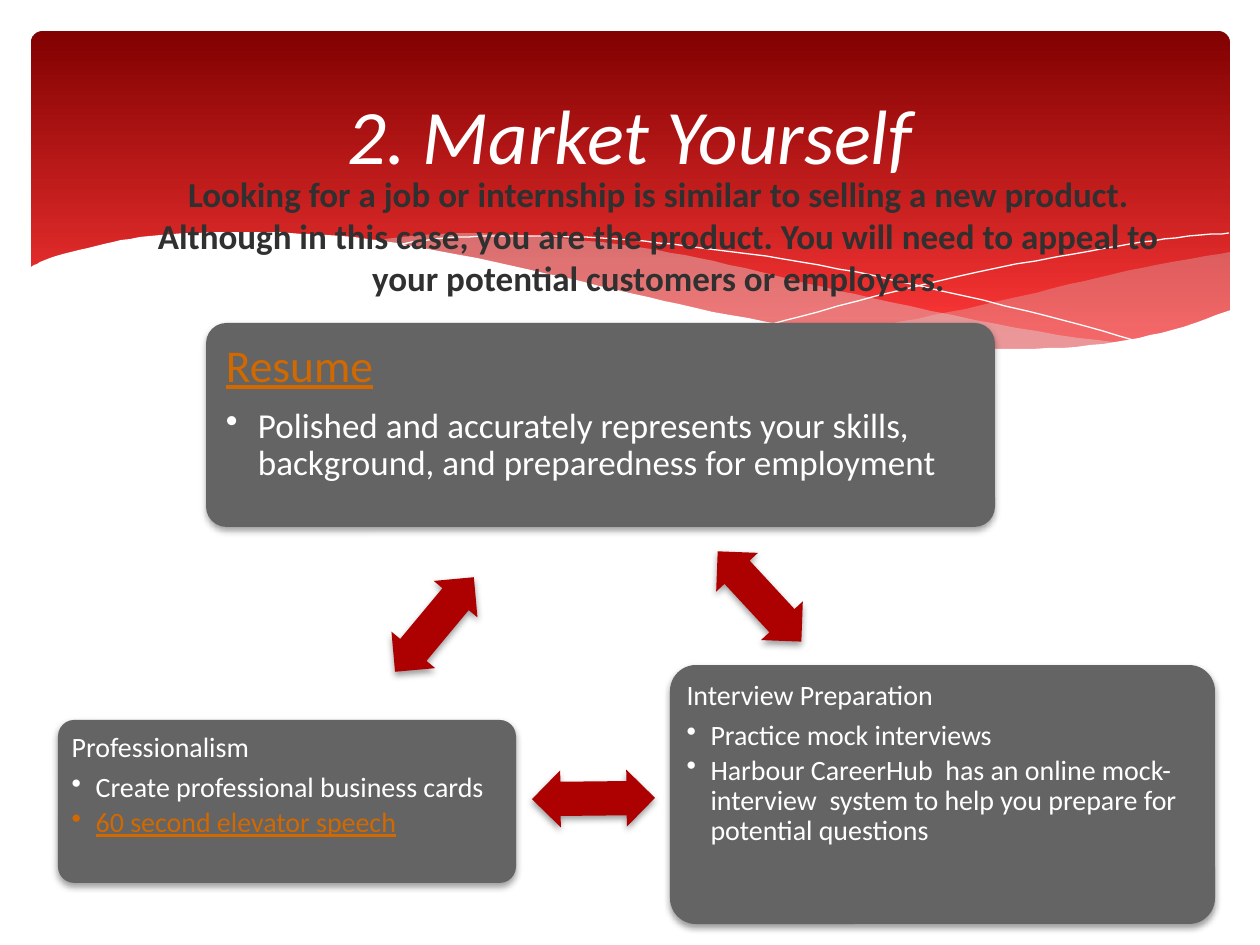
from dataclasses import dataclass

from lxml import etree
from pptx import Presentation
from pptx import util as u
from pptx.dml import color
from pptx.enum import shapes, text
from pptx.oxml import ns

PX = u.Inches(1) / 126
KIND = shapes.MSO_SHAPE


@dataclass(frozen=True)
class Theme:
    font: str = "Calibri"
    white: str = "FFFFFF"
    dark: str = "303030"
    card: str = "646464"
    link: str = "D26900"
    arrow: str = "AD0101"
    wave: str = "DEDEE0"
    banner: tuple = ((0, "820101"), (0.9, "FE3737"))
    title: int = 44
    heading: int = 26
    body: int = 20
    small: int = 16


THEME = Theme()
LINK = {"color": THEME.link, "underline": True}

# Points that each wave passes through, in px
WAVE_RIGHT = [
    [(1230, 252), (1142, 268), (1085, 281), (982, 305), (890, 324), (833, 334)],
    [(833, 334), (888, 341), (954, 348), (1012, 350), (1076, 348), (1130, 340),
     (1178, 330), (1230, 311)],
]
WAVE_MIDDLE = [
    [(1125, 344), (1017, 328), (890, 302), (793, 280), (699, 258), (616, 244),
     (529, 236), (455, 233), (360, 241)],
    [(360, 241), (456, 256), (566, 280), (668, 302), (757, 321), (857, 338),
     (942, 348), (1017, 350), (1080, 349), (1125, 344)],
]
LINE_FALLING = [[(389, 246), (445, 238), (524, 236), (616, 239), (701, 248),
                 (801, 262), (916, 285), (1047, 316), (1143, 343)]]
LINE_RISING = [[(772, 324), (876, 296), (978, 272), (1091, 251), (1164, 239),
                (1229, 233)]]
BANNER_EDGE = [
    [(1231, 310), (1172, 330), (1103, 344), (1019, 349), (937, 345), (842, 334),
     (730, 315), (634, 294), (563, 277), (460, 255), (368, 239), (290, 233),
     (223, 232), (150, 236), (96, 246), (50, 258), (29, 268)],
    [(29, 415), (1231, 415)],
]

CARDS = [
    ((206, 323, 789, 204), 14, THEME.heading, THEME.body, 32, ("Resume", LINK), [
        ("Polished and accurately represents your skills, background, "
         "and preparedness for employment", {})]),
    ((670, 665, 545, 259), 9, THEME.small, THEME.small, 24, ("Interview Preparation", {}), [
        ("Practice mock interviews", {}),
        ("Harbour CareerHub  has an online mock-interview  system to help you "
         "prepare for potential questions", {})]),
    ((58, 720, 458, 163), 9, THEME.small, THEME.small, 24, ("Professionalism", {}), [
        ("Create professional business cards", {}),
        ("60 second elevator speech", LINK)]),
]
ARROWS = [((698, 568), 47.2), ((532, 770), 179.4), ((373, 596), 309.8)]


def emu(px):
    return u.Emu(round(px * PX))


def rgb(value):
    return color.RGBColor.from_string(value)


def add_xml(parent, tag, **attributes):
    return etree.SubElement(parent, ns.qn(tag), attributes)


def smooth(points, steps=6):
    """Sample a Catmull-Rom curve through the points."""
    if len(points) < 3:
        return points
    padded = [points[0], *points, points[-1]]
    curve = [points[0]]
    for a, b, c, d in zip(padded, padded[1:], padded[2:], padded[3:]):
        for step in range(1, steps + 1):
            t = step / steps
            curve.append(tuple(
                (2 * q + (r - p) * t + (2 * p - 5 * q + 4 * r - s) * t ** 2
                 + (3 * q - p - 3 * r + s) * t ** 3) / 2
                for p, q, r, s in zip(a, b, c, d)))
    return curve


class Painter:
    def __init__(self, slide, theme):
        self.shapes = slide.shapes
        self.theme = theme

    def paint(self, shape, fill=None, alpha=None, line=None):
        shape.shadow.inherit = False
        if fill:
            shape.fill.solid()
            shape.fill.fore_color.rgb = rgb(fill)
            if alpha:
                solid = shape._element.spPr.find(ns.qn("a:solidFill"))
                add_xml(solid[0], "a:alpha", val=str(alpha * 1000))
        else:
            shape.fill.background()
        if line:
            shape.line.color.rgb = rgb(line)
            shape.line.width = u.Pt(0)
        else:
            shape.line.fill.background()

    def preset(self, kind, box, adjustments, fill=None):
        shape = self.shapes.add_shape(kind, *map(emu, box))
        for index, value in enumerate(adjustments):
            shape.adjustments[index] = value
        self.paint(shape, fill)
        return shape

    def banner(self, box):
        shape = self.preset(KIND.ROUNDED_RECTANGLE, box, [0.034])
        shape.fill.gradient()
        shape.fill.gradient_angle = 270
        for stop, (position, value) in zip(shape.fill.gradient_stops, self.theme.banner):
            stop.position = position
            stop.color.rgb = rgb(value)

    def wave(self, curves, close=True, **style):
        points = [point for curve in curves for point in smooth(curve)]
        builder = self.shapes.build_freeform(*points[0], scale=PX)
        builder.add_line_segments(points[1:], close=close)
        self.paint(builder.convert_to_shape(), **style)

    def drop_shadow(self, shape):
        effects = shape._element.spPr.find(ns.qn("a:effectLst"))
        shadow = add_xml(effects, "a:outerShdw", blurRad=str(u.Pt(4)), dist=str(u.Pt(2)),
                         dir="5400000", algn="ctr", rotWithShape="0")
        add_xml(add_xml(shadow, "a:srgbClr", val="000000"), "a:alpha", val="38000")

    def add_span(self, para, content, **style):
        span = para.add_run()
        span.text = content
        span.font.name = self.theme.font
        span.font.color.rgb = rgb(style.pop("color", self.theme.white))
        style["size"] = u.Pt(style["size"])
        for name, value in style.items():
            setattr(span.font, name, value)

    def frame(self, shape, **settings):
        for name, value in {"word_wrap": True, **settings}.items():
            setattr(shape.text_frame, name, value)
        return shape.text_frame

    def label(self, box, content, anchor, **style):
        shape = self.shapes.add_textbox(*map(emu, box))
        para = self.frame(shape, vertical_anchor=anchor).paragraphs[0]
        para.alignment = text.PP_ALIGN.CENTER
        self.add_span(para, content, **style)

    def card(self, box, inset, heading_size, body_size, indent, heading, items):
        shape = self.preset(KIND.ROUNDED_RECTANGLE, box, [0.1], self.theme.card)
        self.drop_shadow(shape)
        margins = {f"margin_{side}": emu(inset) for side in ("left", "top", "right", "bottom")}
        frame = self.frame(shape, vertical_anchor=text.MSO_ANCHOR.TOP, **margins)
        for index, (content, style) in enumerate([heading, *items]):
            para = frame.add_paragraph() if index else frame.paragraphs[0]
            size, gap = (body_size, 0.15) if index else (heading_size, 0.35)
            para.alignment = text.PP_ALIGN.LEFT
            para.line_spacing = 0.9
            para.space_after = u.Pt(round(size * gap, 1))
            if index:
                properties = para._p.get_or_add_pPr()
                properties.set("marL", str(emu(indent)))
                properties.set("indent", str(-emu(indent)))
                add_xml(properties, "a:buChar", char="•")
            self.add_span(para, content, size=size, **style)

    def arrow(self, corner, angle):
        shape = self.preset(KIND.LEFT_RIGHT_ARROW, (*corner, 123, 57), [0.6, 0.5],
                            self.theme.arrow)
        shape.rotation = angle
        self.drop_shadow(shape)


def main():
    deck = Presentation()
    deck.slide_width, deck.slide_height = emu(1260), emu(945)
    page = Painter(deck.slides.add_slide(deck.slide_layouts[6]), THEME)

    page.banner((31, 31, 1199, 340))
    page.wave(WAVE_RIGHT, fill=THEME.wave, alpha=29)
    page.wave(WAVE_MIDDLE, fill=THEME.wave, alpha=40)
    for line in (LINE_FALLING, LINE_RISING):
        page.wave(line, close=False, line=THEME.white)
    page.wave(BANNER_EDGE, fill=THEME.white)

    for card in CARDS:
        page.card(*card)
    for arrow in ARROWS:
        page.arrow(*arrow)

    page.label((63, 47, 1134, 173), "2. Market Yourself", text.MSO_ANCHOR.MIDDLE,
               size=THEME.title, italic=True)
    page.label((120, 166, 1077, 140),
               "Looking for a job or internship is similar to selling a new product. "
               "Although in this case, you are the product. You will need to appeal to "
               "your potential customers or employers.", text.MSO_ANCHOR.TOP,
               size=THEME.body, color=THEME.dark, bold=True)
    deck.save("out.pptx")


if __name__ == "__main__":
    main()
